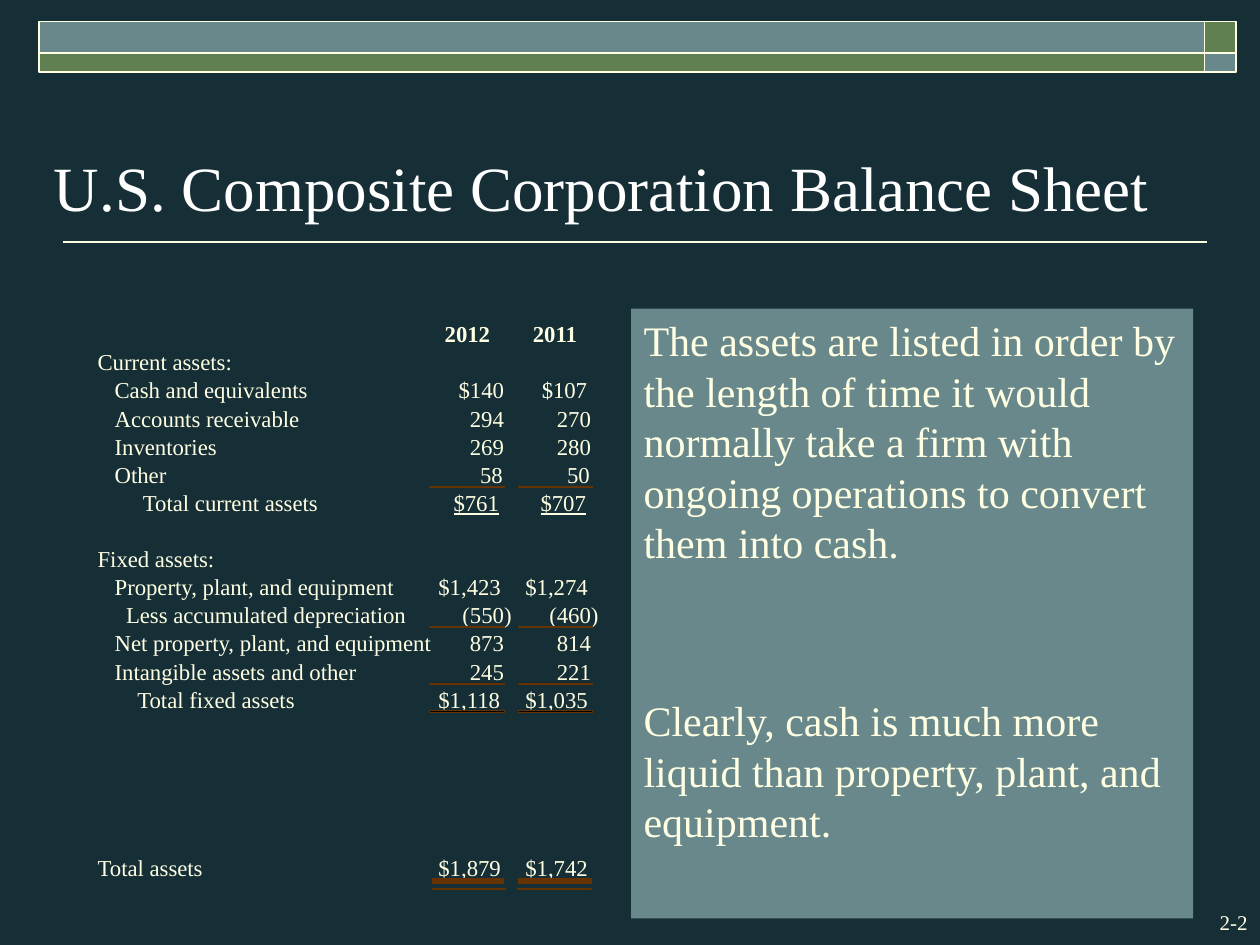
import pptx
import pptx.dml.color
import pptx.enum.shapes
import pptx.enum.text
import pptx.oxml
import pptx.oxml.ns
import pptx.util

Inches = pptx.util.Inches
Pt = pptx.util.Pt
RGBColor = pptx.dml.color.RGBColor
Align = pptx.enum.text.PP_ALIGN
Anchor = pptx.enum.text.MSO_ANCHOR

NAVY = RGBColor(0x16, 0x2E, 0x36)
CREAM = RGBColor(0xFF, 0xFF, 0xE3)
WHITE = RGBColor(0xFF, 0xFF, 0xFF)
GREEN = RGBColor(0x61, 0x80, 0x52)
TEAL = RGBColor(0x69, 0x88, 0x8B)
BLACK = RGBColor(0, 0, 0)
BROWN = RGBColor(0x66, 0x33, 0x00)

FONT = "Times New Roman"
ROW_TOP, ROW_STEP, ROW_HEIGHT = 2.54, 0.223, 0.22
COLUMN_STEP = 0.69
SPACE_WIDTH = 0.045
FIGURE_WIDTHS = {2: 0.18, 3: 0.27, 4: 0.36, 5: 0.39, 6: 0.5}

# row, label, label width, indent in spaces, left of first figure, figures
ENTRIES = [
    (1, "Current assets:", 1.07, 0, 0, ()),
    (2, "Cash and equivalents", 1.67, 3, 3.64, ("$140", "$107")),
    (3, "Accounts receivable", 1.6, 3, 3.73, ("294", "270")),
    (4, "Inventories", 0.95, 3, 3.73, ("269", "280")),
    (5, "Other", 0.55, 3, 3.81, ("58", "50")),
    (6, "Total current assets", 1.76, 8, 3.6, ("$761", "$707")),
    (8, "Fixed assets:", 0.93, 0, 0, ()),
    (9, "Property, plant, and equipment", 2.37, 3, 3.48, ("$1,423", "$1,274")),
    (10, "Less accumulated depreciation", 2.45, 5, 3.67, ("(550)", "(460)")),
    (11, "Net property, plant, and equipment", 2.66, 3, 3.73, ("873", "814")),
    (12, "Intangible assets and other", 2.05, 3, 3.73, ("245", "221")),
    (13, "Total fixed assets", 1.58, 7, 3.48, ("$1,118", "$1,035")),
    (19, "Total assets", 0.85, 0, 3.48, ("$1,879", "$1,742")),
]
UNDERLINED_ROW = 6

PANEL_TEXT = [
    ("The assets are listed in order by the length of time it would normally "
     "take a firm with ongoing operations to convert them into cash.", 2),
    ("Clearly, cash is much more liquid than property, plant, and equipment.", 73),
]


def set_all(obj, values):
    for name, value in values.items():
        setattr(obj, name, value)


def add_rect(slide, box, fill, line=None, width=1):
    s = slide.shapes.add_shape(pptx.enum.shapes.MSO_SHAPE.RECTANGLE,
                               *map(Inches, box))
    s.shadow.inherit = False
    s.fill.solid()
    s.fill.fore_color.rgb = fill
    if line is None:
        s.line.fill.background()
    else:
        s.line.color.rgb = line
        s.line.width = Pt(width)
    return s


def add_line(slide, left, right, y, color, width):
    s = slide.shapes.add_connector(pptx.enum.shapes.MSO_CONNECTOR.STRAIGHT,
                                   *map(Inches, (left, y, right, y)))
    s.line.color.rgb = color
    s.line.width = Pt(width)
    pptx.oxml.ns.qn("a:effectLst")
    s._element.spPr.append(pptx.oxml.parse_xml(
        '<a:effectLst xmlns:a="http://schemas.openxmlformats.org/'
        'drawingml/2006/main"/>'))


def write(p, text, size, color=CREAM, **extra):
    r = p.add_run()
    r.text = text
    r.font.color.rgb = color
    set_all(r.font, {"name": FONT, "size": Pt(size), **extra})


def add_text(slide, box, text, size, color=CREAM, align=Align.LEFT,
             anchor=Anchor.TOP):
    tf = slide.shapes.add_textbox(*map(Inches, box)).text_frame
    set_all(tf, {"word_wrap": True, "vertical_anchor": anchor})
    p = tf.paragraphs[0]
    p.alignment = align
    write(p, text, size, color)


def add_entry_text(slide, left, row, width, text, indent=0, **extra):
    """Place one unwrapped, margin-free label or figure on the row grid."""
    box = (left, ROW_TOP + row * ROW_STEP, width, ROW_HEIGHT)
    tf = slide.shapes.add_textbox(*map(Inches, box)).text_frame
    set_all(tf, {"word_wrap": False, "margin_left": 0, "margin_right": 0,
                 "margin_top": 0, "margin_bottom": 0,
                 "auto_size": pptx.enum.text.MSO_AUTO_SIZE.SHAPE_TO_FIT_TEXT})
    p = tf.paragraphs[0]
    if indent:
        p._p.get_or_add_pPr().set("marL", str(Inches(indent)))
    write(p, text, 13, **extra)


def add_banner(slide):
    add_line(slide, 0.5, 9.58, 1.92, CREAM, 1)
    for left, width, colors in ((0.31, 9.25, (TEAL, GREEN)),
                                (9.56, 0.25, (GREEN, TEAL))):
        for top, height, color in zip((0.17, 0.42), (0.25, 0.15), colors):
            add_rect(slide, (left, top, width, height), color, CREAM)


def add_balance_sheet(slide):
    for left, year in ((3.53, "2012"), (4.23, "2011")):
        add_entry_text(slide, left, 0, 0.36, year, bold=True)
    for row, label, width, spaces, first, figures in ENTRIES:
        add_entry_text(slide, 0.775, row, width, label, spaces * SPACE_WIDTH)
        step = 0.66 if label.startswith("Cash") else COLUMN_STEP
        for i, figure in enumerate(figures):
            add_entry_text(slide, first + i * step, row,
                           FIGURE_WIDTHS[len(figure)], figure,
                           underline=row == UNDERLINED_ROW)


def add_sum_rules(slide):
    for left, right in ((3.41, 4), (4.11, 4.7)):
        for y in (3.86, 4.97, 5.42, 5.64):
            add_rect(slide, (left, y, 0.59, 0.01), BLACK, BROWN, 0.25)
        start = max(left, 3.43)
        for y in (6.98, 7):
            add_line(slide, start, right, y, BROWN, 0)
        add_rect(slide, (start, 7.05, 0.58, 0.01), BLACK, BROWN, 0.75)


def add_panel(slide):
    tf = add_rect(slide, (5.01, 2.45, 4.46, 4.84), TEAL).text_frame
    set_all(tf, {"word_wrap": True, "vertical_anchor": Anchor.TOP})
    for i, (text, space) in enumerate(PANEL_TEXT):
        p = tf.add_paragraph() if i else tf.paragraphs[0]
        set_all(p, {"alignment": Align.LEFT, "space_before": Pt(space),
                    "line_spacing": Pt(28.8)})
        write(p, text, 24)


def main():
    prs = pptx.Presentation()
    set_all(prs, {"slide_width": Inches(10), "slide_height": Inches(7.5)})
    slide = prs.slides.add_slide(prs.slide_layouts[6])
    slide.background.fill.solid()
    slide.background.fill.fore_color.rgb = NAVY
    add_banner(slide)
    add_text(slide, (9.17, 7.17, 0.83, 0.3), "2-2", 12, align=Align.RIGHT)
    add_text(slide, (0.33, 0.58, 9.07, 1.25),
             "U.S. Composite Corporation Balance Sheet", 36, WHITE,
             anchor=Anchor.BOTTOM)
    add_balance_sheet(slide)
    add_sum_rules(slide)
    add_panel(slide)
    prs.save("out.pptx")


if __name__ == "__main__":
    main()
